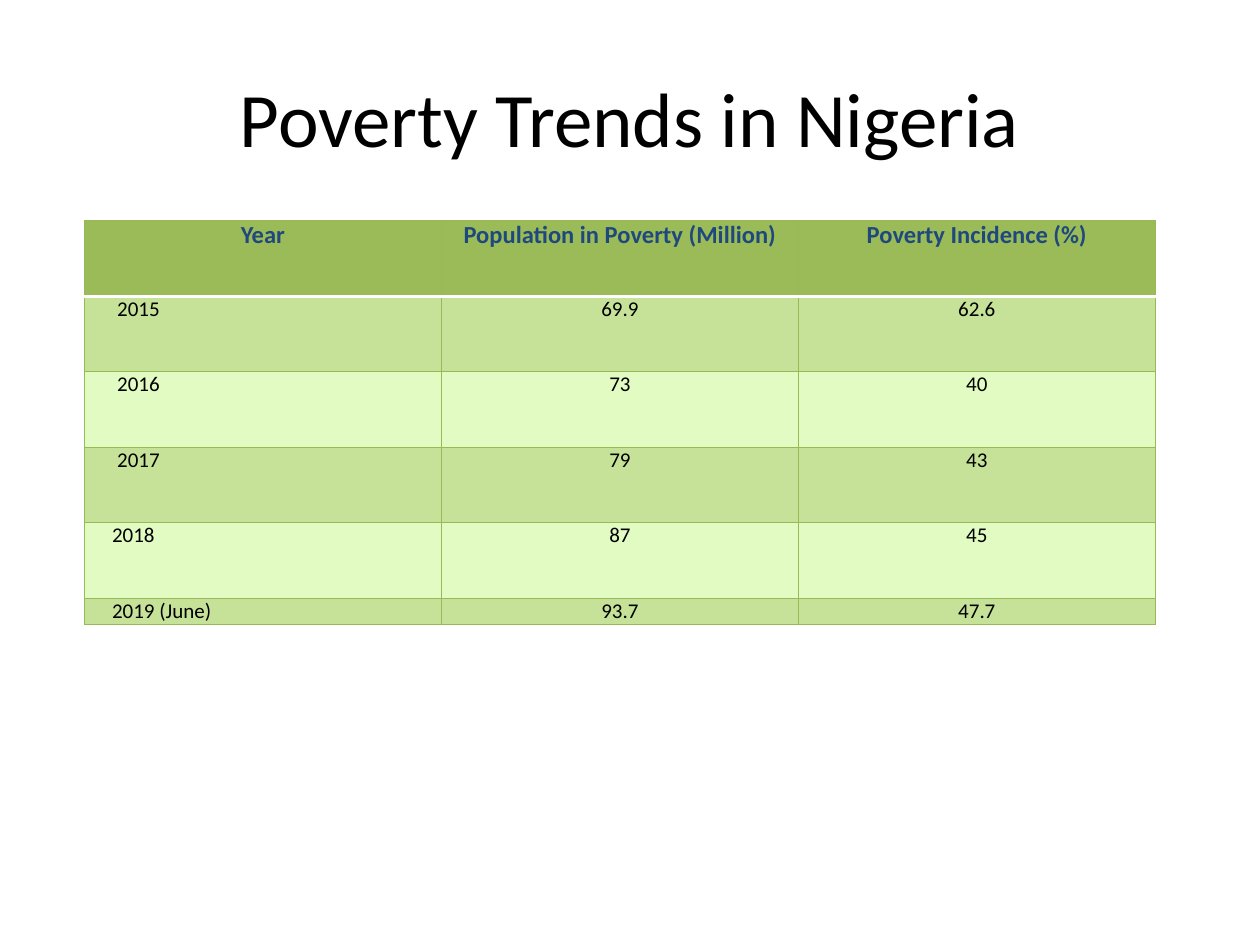
import pptx
import pptx.dml.color
import pptx.enum.text
import pptx.oxml
import pptx.oxml.ns
import pptx.util
from pptx.util import Inches

RGBColor = pptx.dml.color.RGBColor
PP_ALIGN = pptx.enum.text.PP_ALIGN

BLACK = RGBColor(0x00, 0x00, 0x00)
WHITE = RGBColor(0xFF, 0xFF, 0xFF)
NAVY = RGBColor(0x1F, 0x49, 0x7D)
HEADER_GREEN = RGBColor(0x9B, 0xBB, 0x59)
BAND_GREEN = RGBColor(0xC6, 0xE1, 0x98)
PALE_GREEN = RGBColor(0xE2, 0xFB, 0xC2)
BORDER_GREEN = RGBColor(0x98, 0xB9, 0x55)

POVERTY_ROWS = [
    ("Year", "Population in Poverty (Million)", "Poverty Incidence (%)"),
    ("2015", "69.9", "62.6"),
    ("2016", "73", "40"),
    ("2017", "79", "43"),
    ("2018", "87", "45"),
    ("2019 (June)", "93.7", "47.7"),
]
ROW_HEIGHTS = [0.6] * 5 + [0.2]
YEAR_INDENTS = [0, 0.19, 0.19, 0.19, 0.15, 0.15]


class SlideBuilder:
    font_name = "Calibri"
    cell_margin = 0.07

    def __init__(self, slide):
        self.slide = slide

    def format_text(self, text_frame, size, color, alignment, bold=False):
        for paragraph in text_frame.paragraphs:
            paragraph.alignment = alignment
            for run in paragraph.runs:
                run.font.name = self.font_name
                run.font.size = pptx.util.Pt(size)
                run.font.bold = bold
                run.font.color.rgb = color

    def add_title(self, text):
        title = self.slide.shapes.title
        title.left, title.top = Inches(0.5), Inches(0.3)
        title.width, title.height = Inches(9), Inches(1.25)
        title.text_frame.text = text
        title.text_frame.vertical_anchor = pptx.enum.text.MSO_ANCHOR.MIDDLE
        self.format_text(title.text_frame, 44, BLACK, PP_ALIGN.CENTER)

    def set_border(self, cell, side, color, width):
        namespace = pptx.oxml.ns.nsdecls("a")
        line = pptx.oxml.parse_xml(
            f'<a:ln{side} {namespace} w="{pptx.util.Pt(width)}">'
            f'<a:solidFill><a:srgbClr val="{color}"/></a:solidFill></a:ln{side}>'
        )
        cell._tc.get_or_add_tcPr().append(line)

    def format_cell(self, cell, row_index, column_index):
        is_header = row_index == 0
        for side in "LRTB":
            below_header = (row_index, side) in ((0, "B"), (1, "T"))
            color, width = (WHITE, 2) if below_header else (BORDER_GREEN, 0.75)
            self.set_border(cell, side, color, width)
        cell.fill.solid()
        band = BAND_GREEN if row_index % 2 else PALE_GREEN
        cell.fill.fore_color.rgb = HEADER_GREEN if is_header else band

        is_year = column_index == 0 and not is_header
        indent = YEAR_INDENTS[row_index] if is_year else 0
        cell.margin_left = Inches(self.cell_margin + indent)
        cell.margin_right = Inches(self.cell_margin)
        cell.margin_top = cell.margin_bottom = 0
        alignment = PP_ALIGN.LEFT if is_year else PP_ALIGN.CENTER
        size, color = (14, NAVY) if is_header else (12, BLACK)
        self.format_text(cell.text_frame, size, color, alignment, is_header)

    def add_table(self, rows, row_heights, left, top, width):
        table = self.slide.shapes.add_table(
            len(rows), len(rows[0]), Inches(left), Inches(top),
            Inches(width), Inches(sum(row_heights)),
        ).table
        for row, height in zip(table.rows, row_heights):
            row.height = Inches(height)
        for row_index, values in enumerate(rows):
            for column_index, value in enumerate(values):
                cell = table.cell(row_index, column_index)
                cell.text_frame.text = value
                self.format_cell(cell, row_index, column_index)


def main():
    presentation = pptx.Presentation()
    presentation.slide_width = Inches(10)
    presentation.slide_height = Inches(7.5)
    slide = presentation.slides.add_slide(presentation.slide_layouts[5])
    builder = SlideBuilder(slide)
    builder.add_title("Poverty Trends in Nigeria")
    builder.add_table(POVERTY_ROWS, ROW_HEIGHTS, left=0.67, top=1.75, width=8.5)
    presentation.save("out.pptx")


if __name__ == "__main__":
    main()
